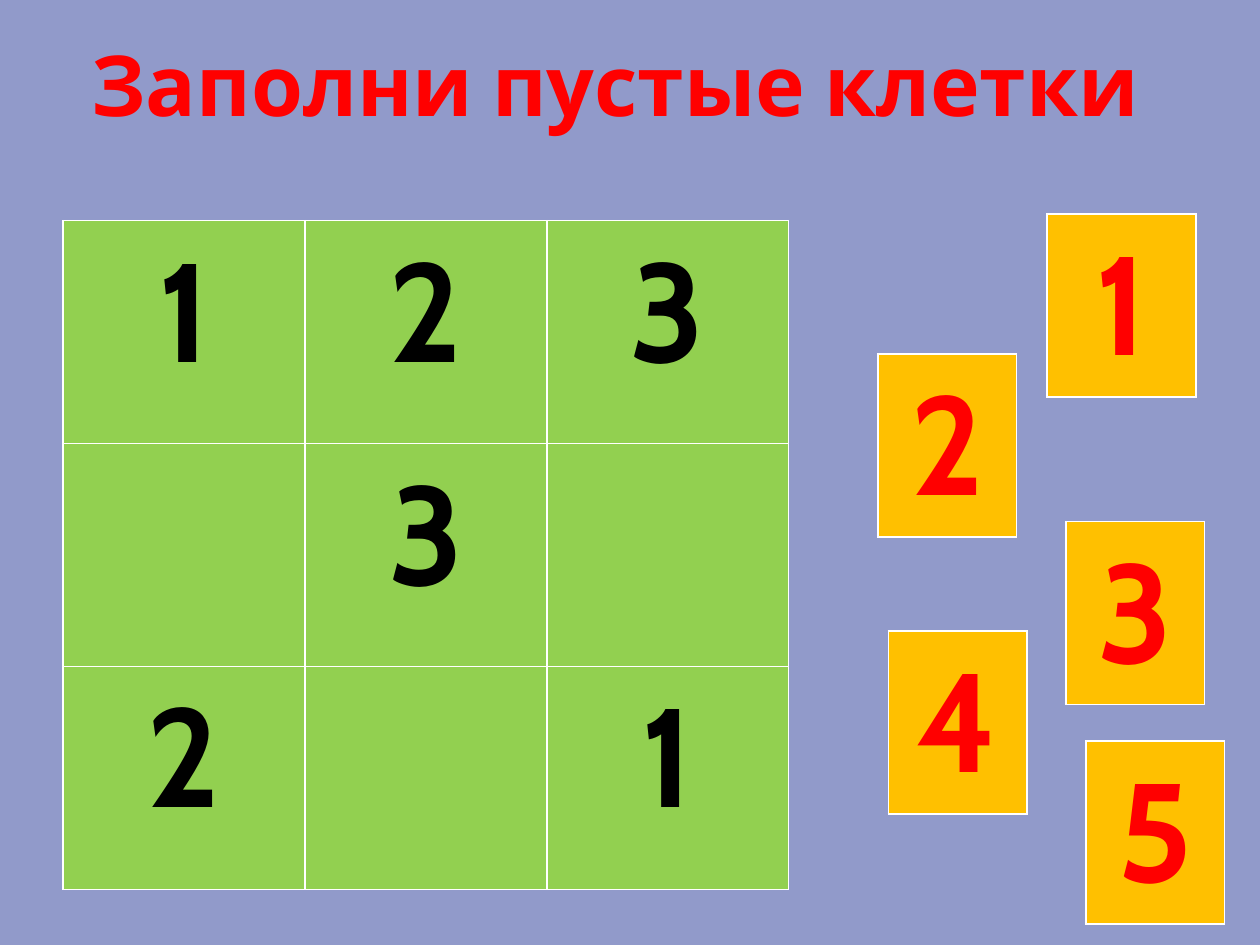
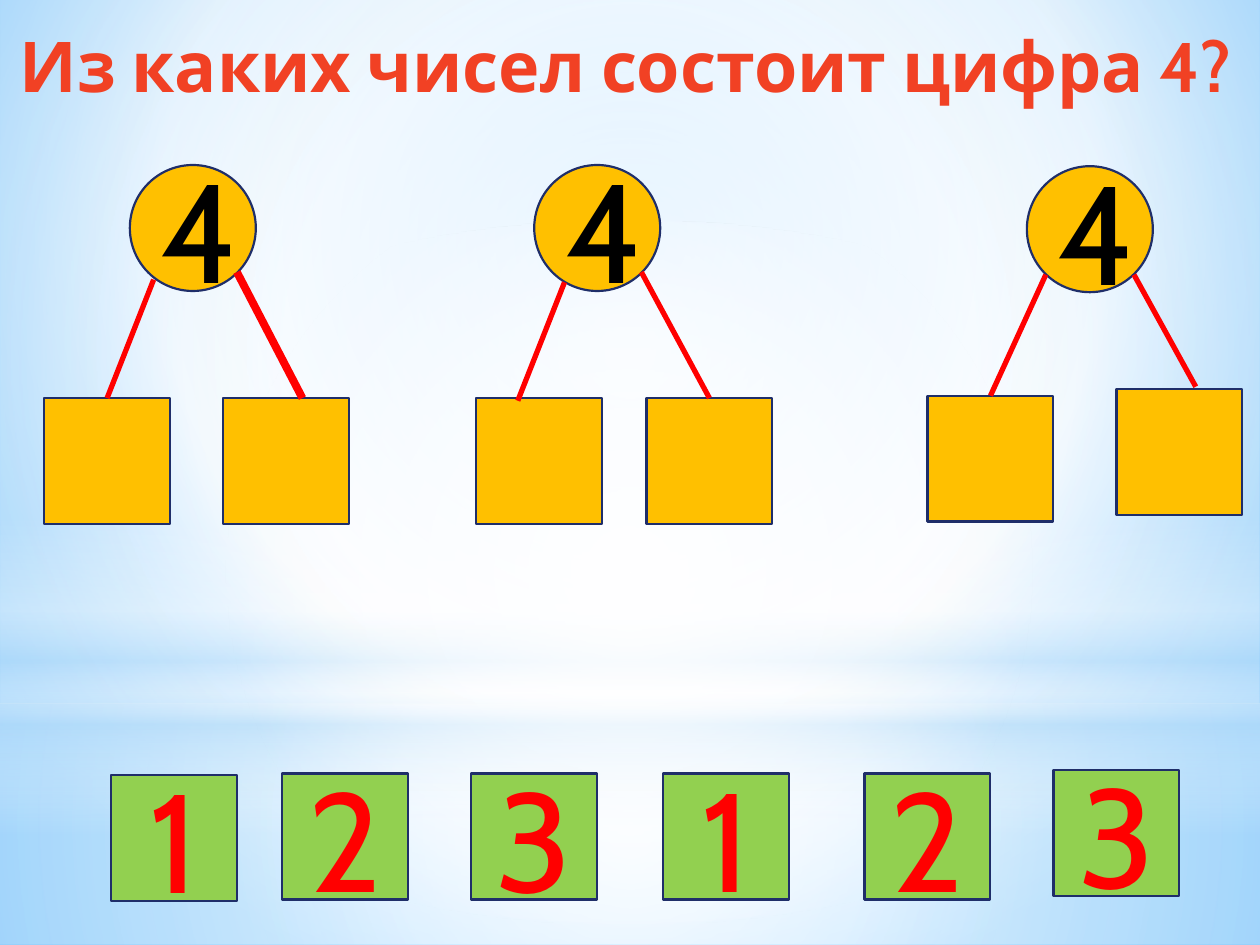
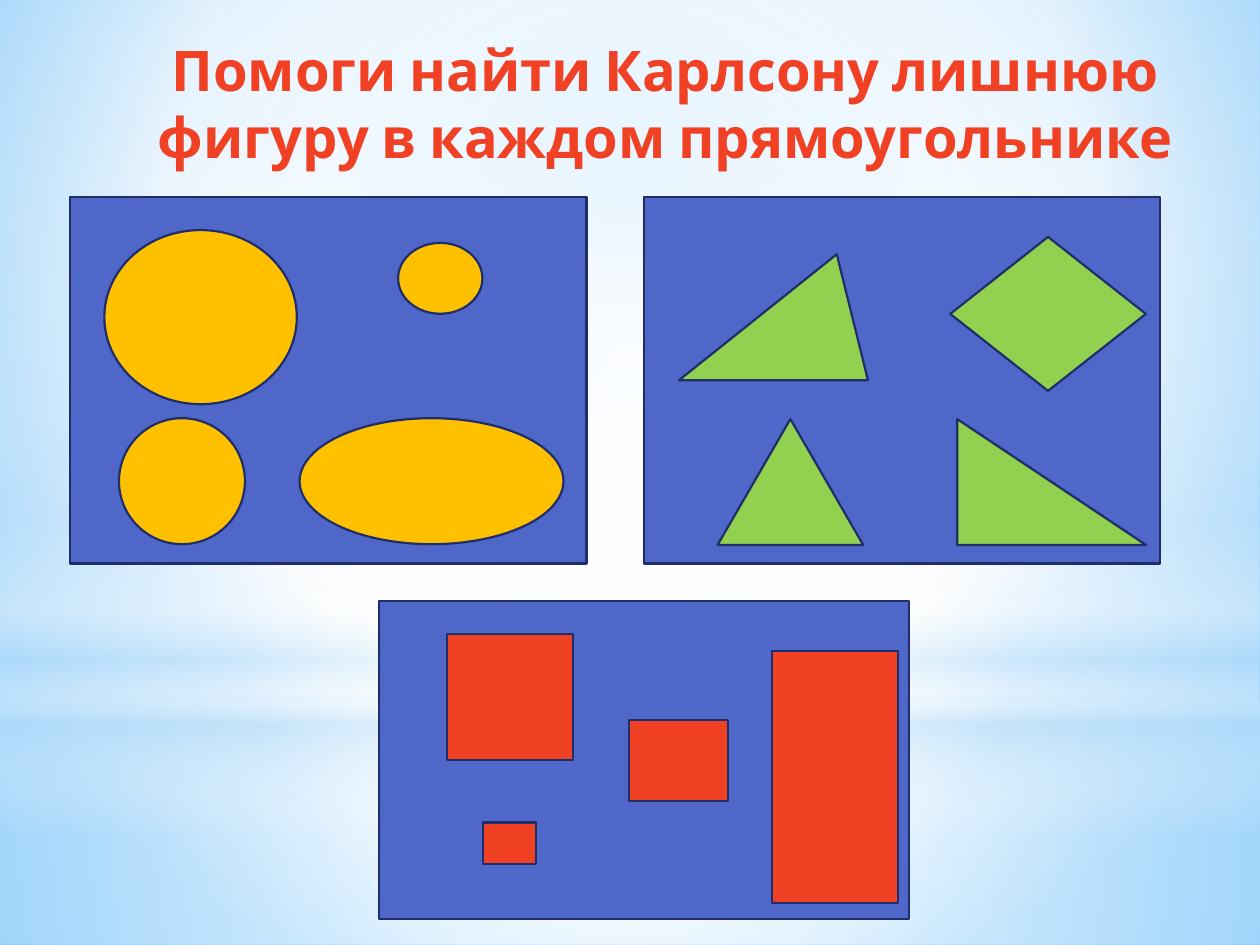
from lxml import etree
from pptx import Presentation
from pptx.dml.color import RGBColor
from pptx.enum.shapes import MSO_CONNECTOR, MSO_SHAPE
from pptx.enum.text import MSO_ANCHOR, MSO_AUTO_SIZE, PP_ALIGN
from pptx.oxml.ns import nsdecls, qn
from pptx.oxml import parse_xml
from pptx.util import Pt

RECT, OVAL = MSO_SHAPE.RECTANGLE, MSO_SHAPE.OVAL
TRIANGLE, RIGHT_TRIANGLE = MSO_SHAPE.ISOSCELES_TRIANGLE, MSO_SHAPE.RIGHT_TRIANGLE
DIAMOND = MSO_SHAPE.DIAMOND
STRAIGHT = MSO_CONNECTOR.STRAIGHT
TOP, MIDDLE = MSO_ANCHOR.TOP, MSO_ANCHOR.MIDDLE
CENTER = PP_ALIGN.CENTER
NO_AUTOFIT = MSO_AUTO_SIZE.NONE

FONT = "Cabin"
DIGIT_SIZE = 80
TILE = 72  # side of a number tile

LAVENDER = RGBColor(0x91, 0x9A, 0xCA)
GREEN = RGBColor(0x92, 0xD0, 0x50)
AMBER = RGBColor(0xFF, 0xC0, 0x00)
RED = RGBColor(0xFF, 0x00, 0x00)
ORANGE_RED = RGBColor(0xF1, 0x41, 0x24)
BLUE = RGBColor(0x4E, 0x67, 0xC8)
NAVY = RGBColor(0x1F, 0x2E, 0x69)
TITLE_OUTLINE = RGBColor(0x17, 0x20, 0x4F)
BLACK = RGBColor(0x00, 0x00, 0x00)
WHITE = RGBColor(0xFF, 0xFF, 0xFF)
SKY = RGBColor(0xB4, 0xDC, 0xFA)
SKY_LIGHT = RGBColor(0x9E, 0xD5, 0xFF)
SKY_DEEP = RGBColor(0x5B, 0xB9, 0xFF)

# Radial focus: left, top, right, bottom in percent
CENTRE_FOCUS = (50, 50, 50, 50)
SKY_FOCUS = (20, 10, 20, 60)


# Gradients and the shared backdrop
def set_gradient(properties, stops, focus=None):
    """Replace the empty fill by a radial gradient, or a vertical one without focus."""
    gradient = parse_xml(f'<a:gradFill {nsdecls("a")} rotWithShape="1"/>')
    stop_list = etree.SubElement(gradient, qn("a:gsLst"))
    for position, color, opacity in stops:
        stop = etree.SubElement(stop_list, qn("a:gs"), pos=str(position * 1000))
        tint = etree.SubElement(stop, qn("a:srgbClr"), val=str(color))
        etree.SubElement(tint, qn("a:alpha"), val=str(opacity * 1000))
    if focus:
        radial = etree.SubElement(gradient, qn("a:path"), path="circle")
        sides = {side: str(value * 1000) for side, value in zip("ltrb", focus)}
        etree.SubElement(radial, qn("a:fillToRect"), **sides)
    else:
        etree.SubElement(gradient, qn("a:lin"), ang="5400000", scaled="0")
    properties.replace(properties.find(qn("a:noFill")), gradient)


def add_backdrop(layout, slide):
    """Give the layout its sky; the glows are drawn on the slide, then moved."""
    layout.background.fill.background()
    set_gradient(layout.element.find(".//" + qn("p:bgPr")),
                 [(0, SKY_LIGHT, 100), (60, WHITE, 100), (100, SKY_DEEP, 100)],
                 SKY_FOCUS)
    glows = [
        (RECT, 401.8, 138.2, CENTRE_FOCUS,
         [(0, WHITE, 91), (37, WHITE, 76), (100, SKY, 79)]),
        (RECT, 0, 401.8, CENTRE_FOCUS,
         [(0, WHITE, 89), (48, WHITE, 62), (100, SKY, 79)]),
        (RECT, 296.6, 180, None,
         [(0, WHITE, 0), (29, WHITE, 30), (45, SKY, 40),
          (55, WHITE, 26), (65, SKY, 60), (100, WHITE, 0)]),
        (OVAL, 126, 401.8, CENTRE_FOCUS, [(0, WHITE, 100), (56, WHITE, 0)]),
    ]
    for index, (kind, top, height, focus, stops) in enumerate(glows):
        glow = slide.shapes.add_shape(kind, 0, Pt(top), Pt(720), Pt(height))
        glow.shadow.inherit = False
        glow.fill.background()
        glow.line.fill.background()
        set_gradient(glow.element.spPr, stops, focus)
        glow.element.nvSpPr.cNvPr.id = 101 + index
        layout.shapes.element.insert(2 + index, glow.element)


# Elements
def write(frame, text, size, color, bold=False):
    frame.text = text
    paragraph = frame.paragraphs[0]
    paragraph.alignment = CENTER
    font = paragraph.font
    font.name, font.size, font.bold = FONT, Pt(size), bold
    font.color.rgb = color


def set_title(slide, text, box, size, color):
    title = slide.shapes.title
    title.left, title.top, title.width, title.height = map(Pt, box)
    frame = title.text_frame
    frame.word_wrap = True
    frame.auto_size = NO_AUTOFIT
    frame.vertical_anchor = TOP
    write(frame, text, size, color, bold=True)
    outline = parse_xml(
        f'<a:ln {nsdecls("a")} w="{Pt(1)}"><a:solidFill>'
        f'<a:srgbClr val="{TITLE_OUTLINE}"/></a:solidFill></a:ln>')
    title.element.find(".//" + qn("a:defRPr")).insert(0, outline)


def add_figure(slide, kind, box, color):
    figure = slide.shapes.add_shape(kind, *map(Pt, box))
    figure.shadow.inherit = False
    figure.fill.solid()
    figure.fill.fore_color.rgb = color
    figure.line.color.rgb = NAVY
    figure.line.width = Pt(1.25)
    return figure


def add_tile(slide, kind, corner, color, digit="", digit_color=BLACK):
    tile = add_figure(slide, kind, (*corner, TILE, TILE), color)
    if digit:
        tile.text_frame.vertical_anchor = MIDDLE
        write(tile.text_frame, digit, DIGIT_SIZE, digit_color)
    return tile


def add_branch(slide, tile, head, foot=None, width=3):
    """Line from a tile to its number; without a foot it joins the tile's top."""
    start = map(Pt, foot) if foot else (tile.left + tile.width // 2, tile.top)
    branch = slide.shapes.add_connector(STRAIGHT, *start, *map(Pt, head))
    if not foot:
        branch.begin_connect(tile, 0)
    branch.line.color.rgb = RED
    branch.line.width = Pt(width)
    etree.SubElement(branch.element.spPr, qn("a:effectLst"))


def add_digit_grid(slide, box, rows, fill, color):
    """Table of digits; the default style draws its white rules."""
    grid = slide.shapes.add_table(len(rows), len(rows[0]), *map(Pt, box)).table
    for r, digits in enumerate(rows):
        for c, digit in enumerate(digits):
            cell = grid.cell(r, c)
            cell.fill.solid()
            cell.fill.fore_color.rgb = fill
            if digit:
                write(cell.text_frame, digit, DIGIT_SIZE, color, bold=True)


# Slides
def build_grid_slide(slide):
    slide.element.set("showMasterSp", "0")
    slide.background.fill.solid()
    slide.background.fill.fore_color.rgb = LAVENDER
    set_title(slide, "Заполни пустые клетки", (14.4, 15, 674.6, 65.5), 48, RED)
    add_digit_grid(slide, (36, 126, 414.7, 382.3),
                   [["1", "2", "3"], ["", "3", ""], ["2", "", "1"]], GREEN, BLACK)
    cards = [("1", 598.3, 122.4, 85), ("2", 501.8, 202.3, 79.2),
             ("5", 620.6, 423.4, 79.2), ("4", 507.6, 360.7, 79.2),
             ("3", 609.1, 298.1, 79.2)]
    for digit, left, top, width in cards:
        add_digit_grid(slide, (left, top, width, 103), [[digit]], AMBER, RED)


def build_sum_slide(slide):
    set_title(slide, "Из каких чисел состоит цифра 4?",
              (-25.2, 9.4, 765.4, 86.4), 40, ORANGE_RED)
    # Number, then per branch: tile corner, head, foot, line width
    sums = [
        ((74.2, 94.3), [((25.2, 227.5), (87.8, 159.8), None, 3),
                        ((127.4, 227.5), (135.4, 155.5), (172.8, 227.5), 4.5)]),
        ((305.3, 94.3), [((272.2, 227.5), (322.6, 161.3), (295.9, 229), 3),
                         ((369.4, 227.5), (366.5, 155.5), None, 3)]),
        ((586.8, 95), [((530, 226.1), (597.6, 157), None, 3),
                       ((638, 222.5), (648, 157), (683.3, 221), 3)]),
    ]
    for number_corner, branches in sums:
        add_tile(slide, OVAL, number_corner, AMBER, "4")
        for tile_corner, head, foot, width in branches:
            tile = add_tile(slide, RECT, tile_corner, AMBER)
            add_branch(slide, tile, head, foot, width)

    answers = [("1", 63.4, 442.8), ("2", 161.3, 442), ("3", 269.3, 442),
               ("1", 379.1, 442), ("2", 494, 442), ("3", 602, 440)]
    for digit, left, top in answers:
        add_tile(slide, RECT, (left, top), GREEN, digit, RED)


def build_odd_one_slide(slide):
    set_title(slide, "Помоги найти Карлсону лишнюю фигуру в каждом прямоугольнике",
              (59.8, 16.6, 640.8, 85), 32, ORANGE_RED)
    # Panel, figure colour, figures
    panels = [
        ((40.2, 112.5, 295, 209.5), AMBER, [
            (OVAL, (59.6, 131.5, 110, 99.5)), (OVAL, (68, 239, 72, 72)),
            (OVAL, (227.5, 138.8, 48.2, 40.5)), (OVAL, (171.2, 239, 150.8, 72))]),
        ((368, 112.5, 295, 209.5), GREEN, [
            (TRIANGLE, (410, 239.5, 83.3, 72)),
            (RIGHT_TRIANGLE, (547, 239.5, 108, 72)),
            (DIAMOND, (543, 135.4, 111.8, 88))]),
        ((216.5, 343.5, 302.8, 181.5), ORANGE_RED, [
            (RECT, (255.4, 362.2, 72, 72)), (RECT, (359.3, 411.3, 56.9, 46.3)),
            (RECT, (276, 470, 30.4, 23.8)), (RECT, (441.2, 372.2, 72, 144))]),
    ]
    for panel, color, figures in panels:
        add_figure(slide, RECT, panel, BLUE)
        for kind, box in figures:
            add_figure(slide, kind, box, color)
    leaning = add_figure(slide, TRIANGLE, (388, 145.3, 108, 72), GREEN)
    leaning.adjustments[0] = 0.835


def main():
    deck = Presentation()
    deck.slide_width, deck.slide_height = Pt(720), Pt(540)
    title_only = deck.slide_layouts[5]
    grid, sums, odd_one = (deck.slides.add_slide(title_only) for _ in range(3))
    add_backdrop(title_only, sums)
    build_grid_slide(grid)
    build_sum_slide(sums)
    build_odd_one_slide(odd_one)
    deck.save("out.pptx")


if __name__ == "__main__":
    main()
